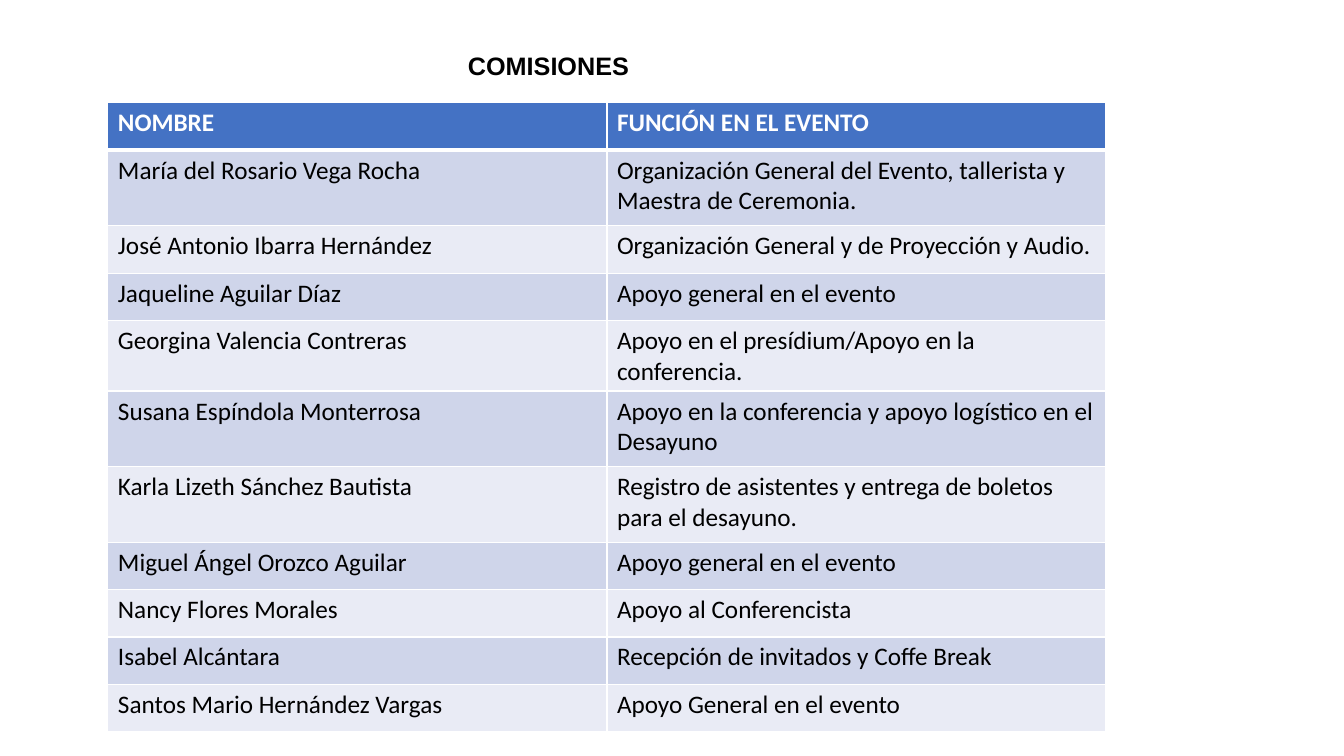
from dataclasses import dataclass

import pptx
import pptx.dml.color
import pptx.enum.text
import pptx.oxml
import pptx.oxml.ns
import pptx.util
from pptx.util import Inches


@dataclass(frozen=True)
class Theme:
    title_font: str = "Arial"
    table_font: str = "Calibri"
    size: int = 18
    ink: str = "000000"
    white: str = "FFFFFF"
    header: str = "4472C4"
    bands: tuple = ("CFD5EA", "E9EBF5")
    thin: int = 1
    thick: int = 3


THEME = Theme()
HEADINGS = ("NOMBRE", "FUNCIÓN EN EL EVENTO")
ONE_LINE, TWO_LINES = 0.47, 0.75
COMMISSIONS = [
    ("María del Rosario Vega Rocha",
     "Organización General del Evento, tallerista y Maestra de Ceremonia.", TWO_LINES),
    ("José Antonio Ibarra Hernández",
     "Organización General y de Proyección y Audio.", ONE_LINE),
    ("Jaqueline Aguilar Díaz", "Apoyo general en el evento", ONE_LINE),
    ("Georgina Valencia Contreras",
     "Apoyo en el presídium/Apoyo en la conferencia.", 0.64),
    ("Susana Espíndola Monterrosa",
     "Apoyo en la conferencia y apoyo logístico en el Desayuno", TWO_LINES),
    ("Karla Lizeth Sánchez Bautista",
     "Registro de asistentes y entrega de boletos para el desayuno.", TWO_LINES),
    ("Miguel Ángel Orozco Aguilar", "Apoyo general en el evento", ONE_LINE),
    ("Nancy Flores Morales", "Apoyo al Conferencista", ONE_LINE),
    ("Isabel Alcántara", "Recepción de invitados y Coffe Break", ONE_LINE),
    ("Santos Mario Hernández Vargas", "Apoyo General en el evento", ONE_LINE),
]


def set_all(target, values):
    for name, value in values.items():
        setattr(target, name, value)


def write(para, text, font, color, bold):
    span = para.add_run()
    span.text = text
    set_all(span.font, {"name": font, "size": pptx.util.Pt(THEME.size), "bold": bold})
    span.font.color.rgb = pptx.dml.color.RGBColor.from_string(color)


def add_title(page, text):
    box = page.shapes.add_textbox(Inches(0.74), Inches(0.31), Inches(9.4), Inches(0.71))
    set_all(box.text_frame, {
        "word_wrap": True,
        "vertical_anchor": pptx.enum.text.MSO_ANCHOR.MIDDLE,
    })
    para = box.text_frame.paragraphs[0]
    set_all(para, {"alignment": pptx.enum.text.PP_ALIGN.CENTER, "line_spacing": 0.9})
    write(para, text, THEME.title_font, THEME.ink, True)


def add_borders(cell, top, bottom):
    """Draw white cell borders; the widths of top and bottom are in points."""
    properties = cell._tc.get_or_add_tcPr()
    widths = {"lnL": THEME.thin, "lnR": THEME.thin, "lnT": top, "lnB": bottom}
    for side, width in widths.items():
        properties.append(pptx.oxml.parse_xml(
            f'<a:{side} {pptx.oxml.ns.nsdecls("a")} w="{pptx.util.Pt(width)}">'
            f'<a:solidFill><a:srgbClr val="{THEME.white}"/></a:solidFill></a:{side}>'))


def fill_row(table, index, texts, fill, color, bold):
    top = THEME.thick if index == 1 else THEME.thin
    bottom = THEME.thick if index == 0 else THEME.thin
    for column, text in enumerate(texts):
        cell = table.cell(index, column)
        add_borders(cell, top, bottom)
        cell.fill.solid()
        cell.fill.fore_color.rgb = pptx.dml.color.RGBColor.from_string(fill)
        write(cell.text_frame.paragraphs[0], text, THEME.table_font, color, bold)


def add_commissions(page):
    heights = [ONE_LINE] + [height for _, _, height in COMMISSIONS]
    table = page.shapes.add_table(
        len(heights), len(HEADINGS), Inches(1.07), Inches(1.02),
        Inches(9.9), Inches(sum(heights))).table
    for row, height in zip(table.rows, heights):
        row.height = Inches(height)
    fill_row(table, 0, HEADINGS, THEME.header, THEME.white, True)
    for index, (name, duty, _) in enumerate(COMMISSIONS, start=1):
        band = THEME.bands[(index - 1) % len(THEME.bands)]
        fill_row(table, index, (name, duty), band, THEME.ink, False)


def main():
    deck = pptx.Presentation()
    set_all(deck, {"slide_width": Inches(13.33), "slide_height": Inches(7.5)})
    page = deck.slides.add_slide(deck.slide_layouts[6])
    add_title(page, "COMISIONES")
    add_commissions(page)
    deck.save("out.pptx")


if __name__ == "__main__":
    main()
